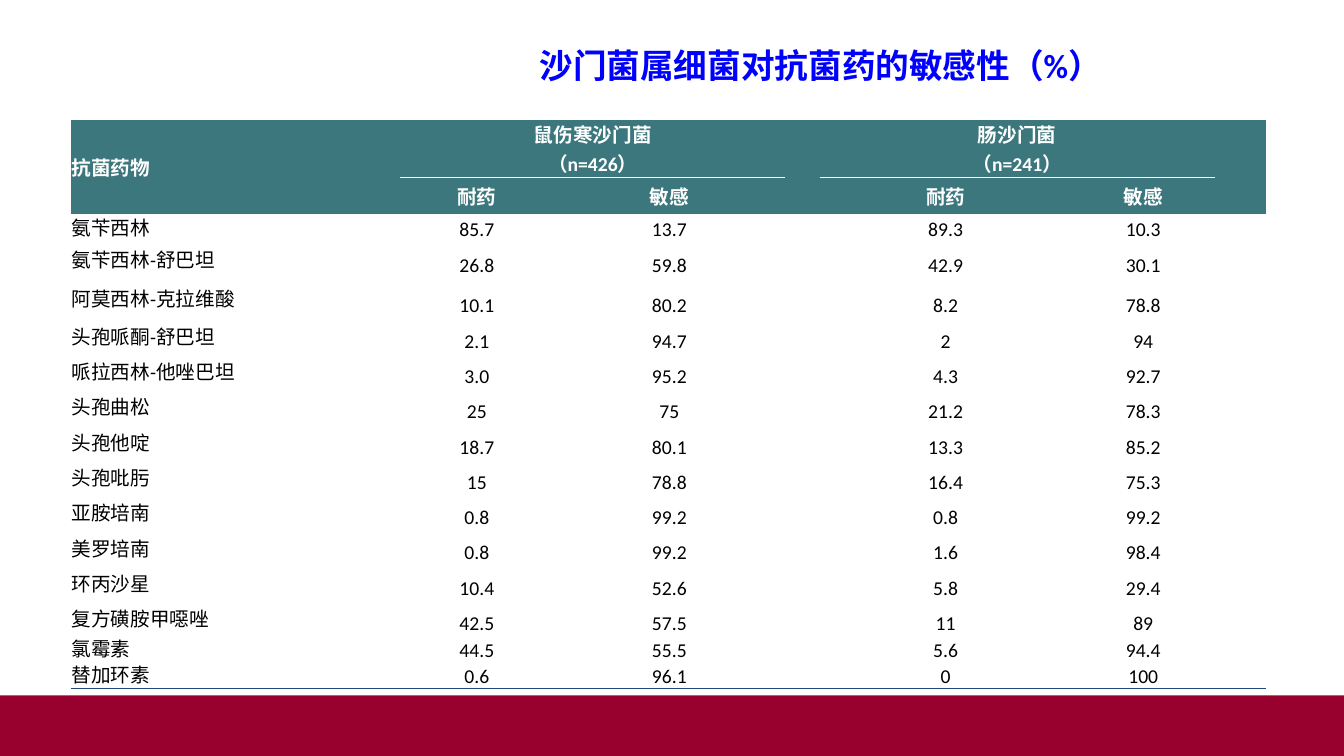
import pptx
import pptx.dml.color
import pptx.enum.shapes
import pptx.enum.text
import pptx.oxml
import pptx.oxml.ns
import pptx.util
from pptx.util import Inches

COLORS = {"band": "98002E", "header": "3C777D", "white": "FFFFFF",
          "text": "000000", "title": "0000FF", "rule": "1F497D"}
COL_WIDTHS = [3.27, 1.52, 2.3, 0.34, 2.5, 1.42, 0.51]
SHORT_ROW = 0.26
ROW_HEIGHTS = [0.56, 0.37, SHORT_ROW, 0.37, 0.4] + [0.35] * 9 + [SHORT_ROW] * 2
GROUPS = {1: "鼠伤寒沙门菌\n（n=426）", 4: "肠沙门菌\n（n=241）"}
VALUE_COLS = [1, 2, 4, 5]
DRUGS = [
    ("氨苄西林", "85.7", "13.7", "89.3", "10.3"),
    ("氨苄西林-舒巴坦", "26.8", "59.8", "42.9", "30.1"),
    ("阿莫西林-克拉维酸", "10.1", "80.2", "8.2", "78.8"),
    ("头孢哌酮-舒巴坦", "2.1", "94.7", "2", "94"),
    ("哌拉西林-他唑巴坦", "3.0", "95.2", "4.3", "92.7"),
    ("头孢曲松", "25", "75", "21.2", "78.3"),
    ("头孢他啶", "18.7", "80.1", "13.3", "85.2"),
    ("头孢吡肟", "15", "78.8", "16.4", "75.3"),
    ("亚胺培南", "0.8", "99.2", "0.8", "99.2"),
    ("美罗培南", "0.8", "99.2", "1.6", "98.4"),
    ("环丙沙星", "10.4", "52.6", "5.8", "29.4"),
    ("复方磺胺甲噁唑", "42.5", "57.5", "11", "89"),
    ("氯霉素", "44.5", "55.5", "5.6", "94.4"),
    ("替加环素", "0.6", "96.1", "0", "100"),
]
PLAIN_TABLE_STYLE = "{2D5ABB26-0587-4C30-8999-92F81FD0307C}"
ANCHOR = pptx.enum.text.MSO_ANCHOR
ALIGN = pptx.enum.text.PP_ALIGN


def rgb(name):
    return pptx.dml.color.RGBColor.from_string(COLORS[name])


class SlideBuilder:
    font = "Calibri"

    def __init__(self, s):
        self.s = s

    def style(self, tf, size, color, bold, align):
        for p in tf.paragraphs:
            p.alignment = align
            p.font.name = self.font
            p.font.size = pptx.util.Pt(size)
            p.font.bold = bold
            p.font.color.rgb = rgb(color)
            if not p.text:  # the end mark sets the height of an empty line
                p._p.get_or_add_endParaRPr().set("sz", str(size * 100))

    def bar(self, x, y, w, h, color):
        sp = self.s.shapes.add_shape(pptx.enum.shapes.MSO_SHAPE.RECTANGLE,
                                     Inches(x), Inches(y), Inches(w), Inches(h))
        sp.shadow.inherit = False
        sp.fill.solid()
        sp.fill.fore_color.rgb = rgb(color)
        sp.line.fill.background()

    def title(self, text, x, y, w, h):
        tf = self.s.shapes.add_textbox(Inches(x), Inches(y), Inches(w), Inches(h)).text_frame
        tf.word_wrap = True
        tf.vertical_anchor = ANCHOR.MIDDLE
        tf.text = text
        self.style(tf, 24, "title", True, ALIGN.CENTER)

    def table(self, x, y, col_widths, row_heights):
        """Add an empty table without banding or grid."""
        shape = self.s.shapes.add_table(len(row_heights), len(col_widths), Inches(x), Inches(y),
                                        Inches(sum(col_widths)), Inches(sum(row_heights)))
        table = shape.table
        table.first_row = table.horz_banding = False
        style_id = pptx.oxml.ns.qn("a:tableStyleId")
        next(shape._element.iter(style_id)).text = PLAIN_TABLE_STYLE
        for col, w in zip(table.columns, col_widths):
            col.width = Inches(w)
        for row, h in zip(table.rows, row_heights):
            row.height = Inches(h)
        return table

    def cell(self, cell, text, header, is_label, tight):
        """Fill one cell; tight lines keep a short row from growing."""
        cell.margin_left = cell.margin_right = Inches(0.01)
        cell.margin_top = cell.margin_bottom = 0
        cell.vertical_anchor = ANCHOR.MIDDLE if header or is_label else ANCHOR.BOTTOM
        if header:
            cell.fill.solid()
            cell.fill.fore_color.rgb = rgb("header")
        else:
            cell.fill.background()
        cell.text = text
        if tight:
            cell.text_frame.paragraphs[0].line_spacing = 0.9
        self.style(cell.text_frame, 14, "white" if header else "text", header,
                   ALIGN.LEFT if is_label else ALIGN.CENTER)

    def border(self, cell, side, color):
        """Draw a 1 pt line on one side of a cell: side is T or B."""
        ln = pptx.oxml.parse_xml(
            f'<a:ln{side} {pptx.oxml.ns.nsdecls("a")} w="12700"><a:solidFill>'
            f'<a:srgbClr val="{COLORS[color]}"/></a:solidFill></a:ln{side}>')
        cell._tc.get_or_add_tcPr().insert(0, ln)


def table_texts():
    """Map (row, column) to the text of that cell."""
    texts = {(0, 0): "抗菌药物"}
    texts.update({(0, c): name for c, name in GROUPS.items()})
    texts.update({(1, c): name for c, name in zip(VALUE_COLS, ["耐药", "敏感"] * 2)})
    for r, drug in enumerate(DRUGS, 2):
        texts.update({(r, c): value for c, value in zip([0] + VALUE_COLS, drug)})
    return texts


def main():
    prs = pptx.Presentation()
    prs.slide_width, prs.slide_height = Inches(13.33), Inches(7.5)
    b = SlideBuilder(prs.slides.add_slide(prs.slide_layouts[6]))
    b.bar(0, 6.9, 13.33, 0.6, "band")

    table = b.table(0.7, 1.19, COL_WIDTHS, ROW_HEIGHTS)
    texts = table_texts()
    for r, height in enumerate(ROW_HEIGHTS):
        for c in range(len(COL_WIDTHS)):
            b.cell(table.cell(r, c), texts.get((r, c), ""), r < 2, c == 0, height == SHORT_ROW)
    for c in VALUE_COLS:
        b.border(table.cell(0, c), "B", "white")
        b.border(table.cell(1, c), "T", "white")
    for c in range(len(COL_WIDTHS)):
        b.border(table.cell(len(ROW_HEIGHTS) - 1, c), "B", "rule")
    table.cell(0, 0).merge(table.cell(1, 0))
    for c in GROUPS:
        table.cell(0, c).merge(table.cell(0, c + 1))

    b.title("沙门菌属细菌对抗菌药的敏感性（%）", 3.71, 0.4, 8.86, 0.5)
    prs.save("out.pptx")


if __name__ == "__main__":
    main()
